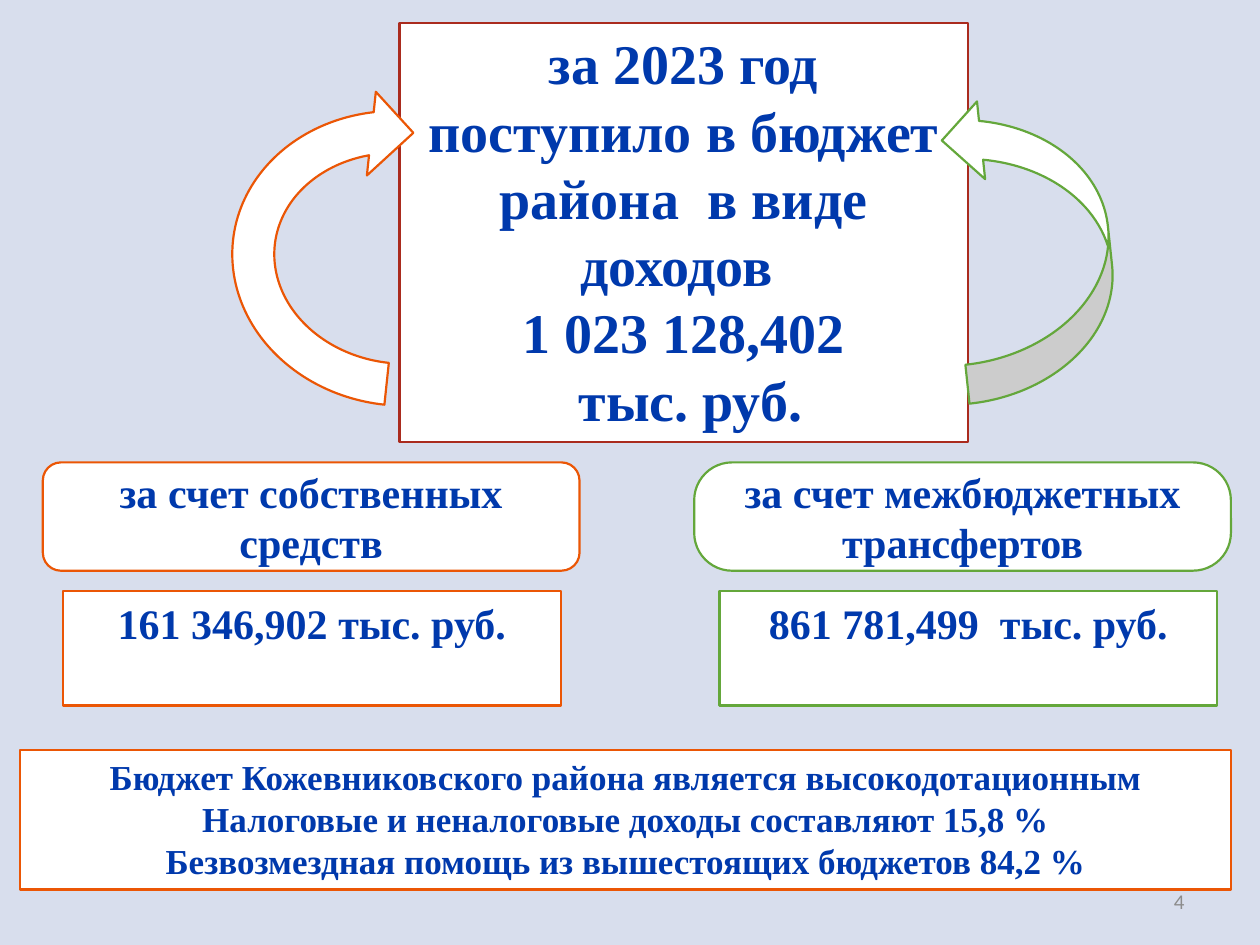
from dataclasses import dataclass

from pptx import Presentation
from pptx.dml.color import RGBColor
from pptx.enum.shapes import MSO_SHAPE
from pptx.enum.text import MSO_ANCHOR, MSO_AUTO_SIZE, PP_ALIGN
from pptx.util import Inches, Pt


@dataclass(frozen=True)
class Theme:
    background: RGBColor = RGBColor(0xD8, 0xDE, 0xED)
    surface: RGBColor = RGBColor(0xFF, 0xFF, 0xFF)
    text: RGBColor = RGBColor(0x00, 0x39, 0xAC)
    muted: RGBColor = RGBColor(0x8C, 0x8C, 0x8C)
    total: RGBColor = RGBColor(0xAA, 0x2B, 0x1E)
    own: RGBColor = RGBColor(0xEB, 0x56, 0x05)
    transfers: RGBColor = RGBColor(0x64, 0xA7, 0x3B)
    font: str = "Times New Roman"
    number_font: str = "Calibri"
    title_size: Pt = Pt(32)
    label_size: Pt = Pt(24)
    summary_size: Pt = Pt(20)
    number_size: Pt = Pt(12)
    line_width: Pt = Pt(1.25)


THEME = Theme()


def style_outline(shape, color):
    shape.fill.solid()
    shape.fill.fore_color.rgb = THEME.surface
    shape.line.color.rgb = color
    shape.line.width = THEME.line_width
    shape.shadow.inherit = False


def write_lines(shape, lines, size, anchor=MSO_ANCHOR.TOP):
    frame = shape.text_frame
    frame.word_wrap = True
    frame.auto_size = MSO_AUTO_SIZE.NONE
    frame.vertical_anchor = anchor
    frame.text = "\n".join(lines)
    for paragraph in frame.paragraphs:
        paragraph.alignment = PP_ALIGN.CENTER
        paragraph.font.name = THEME.font
        paragraph.font.size = size
        paragraph.font.bold = True
        paragraph.font.color.rgb = THEME.text


def add_outlined(slide, kind, box, color, rotation=0):
    shape = slide.shapes.add_shape(kind, *map(Inches, box))
    shape.rotation = rotation
    style_outline(shape, color)
    return shape


def place_title(slide, box, lines):
    title = slide.shapes.title
    title.left, title.top, title.width, title.height = map(Inches, box)
    style_outline(title, THEME.total)
    write_lines(title, lines, THEME.title_size)


def add_income_source(slide, label, amount, label_left, amount_left, color):
    """Add a rounded label with its amount box below; return the label shape."""
    label_shape = add_outlined(slide, MSO_SHAPE.ROUNDED_RECTANGLE,
                               (label_left, 3.67, 4.26, 0.86), color)
    write_lines(label_shape, [label], THEME.label_size, MSO_ANCHOR.MIDDLE)
    amount_shape = add_outlined(slide, MSO_SHAPE.RECTANGLE,
                                (amount_left, 4.69, 3.95, 0.91), color)
    write_lines(amount_shape, [amount], THEME.label_size)
    return label_shape


def add_slide_number(slide, number):
    box = slide.shapes.add_textbox(Inches(7.17), Inches(6.95), Inches(2.33), Inches(0.4))
    box.text_frame.word_wrap = True
    box.text_frame.vertical_anchor = MSO_ANCHOR.MIDDLE
    paragraph = box.text_frame.paragraphs[0]
    paragraph.text = number
    paragraph.alignment = PP_ALIGN.RIGHT
    paragraph.font.name = THEME.number_font
    paragraph.font.size = THEME.number_size
    paragraph.font.color.rgb = THEME.muted


def main():
    presentation = Presentation()
    presentation.slide_width = Inches(10)
    presentation.slide_height = Inches(7.5)
    slide = presentation.slides.add_slide(presentation.slide_layouts.get_by_name("Title Only"))
    slide.background.fill.solid()
    slide.background.fill.fore_color.rgb = THEME.background

    add_slide_number(slide, "4")
    summary = add_outlined(slide, MSO_SHAPE.RECTANGLE, (0.16, 5.95, 9.61, 1.11), THEME.own)
    write_lines(summary, [
        "Бюджет Кожевниковского района является высокодотационным "
        "Налоговые и неналоговые доходы составляют 15,8 %",
        "Безвозмездная помощь из вышестоящих бюджетов 84,2 %",
    ], THEME.summary_size)
    place_title(slide, (3.17, 0.18, 4.51, 3.33), [
        "за 2023 год",
        "поступило в бюджет района  в виде доходов ",
        "1 023 128,402",
        " тыс. руб.",
    ])

    add_income_source(slide, "за счет собственных средств", "161 346,902 тыс. руб.",
                      0.34, 0.5, THEME.own)
    transfers_label = add_income_source(slide, "за счет межбюджетных трансфертов",
                                        "861 781,499  тыс. руб.", 5.51, 5.71, THEME.transfers)
    transfers_label.adjustments[0] = 0.35

    add_outlined(slide, MSO_SHAPE.CIRCULAR_ARROW, (1.84, 0.55, 2.67, 3), THEME.own, 276.1)
    add_outlined(slide, MSO_SHAPE.CURVED_UP_ARROW, (6.98, 1.32, 2.41, 1.24),
                 THEME.transfers, 264)
    presentation.save("out.pptx")


if __name__ == "__main__":
    main()
